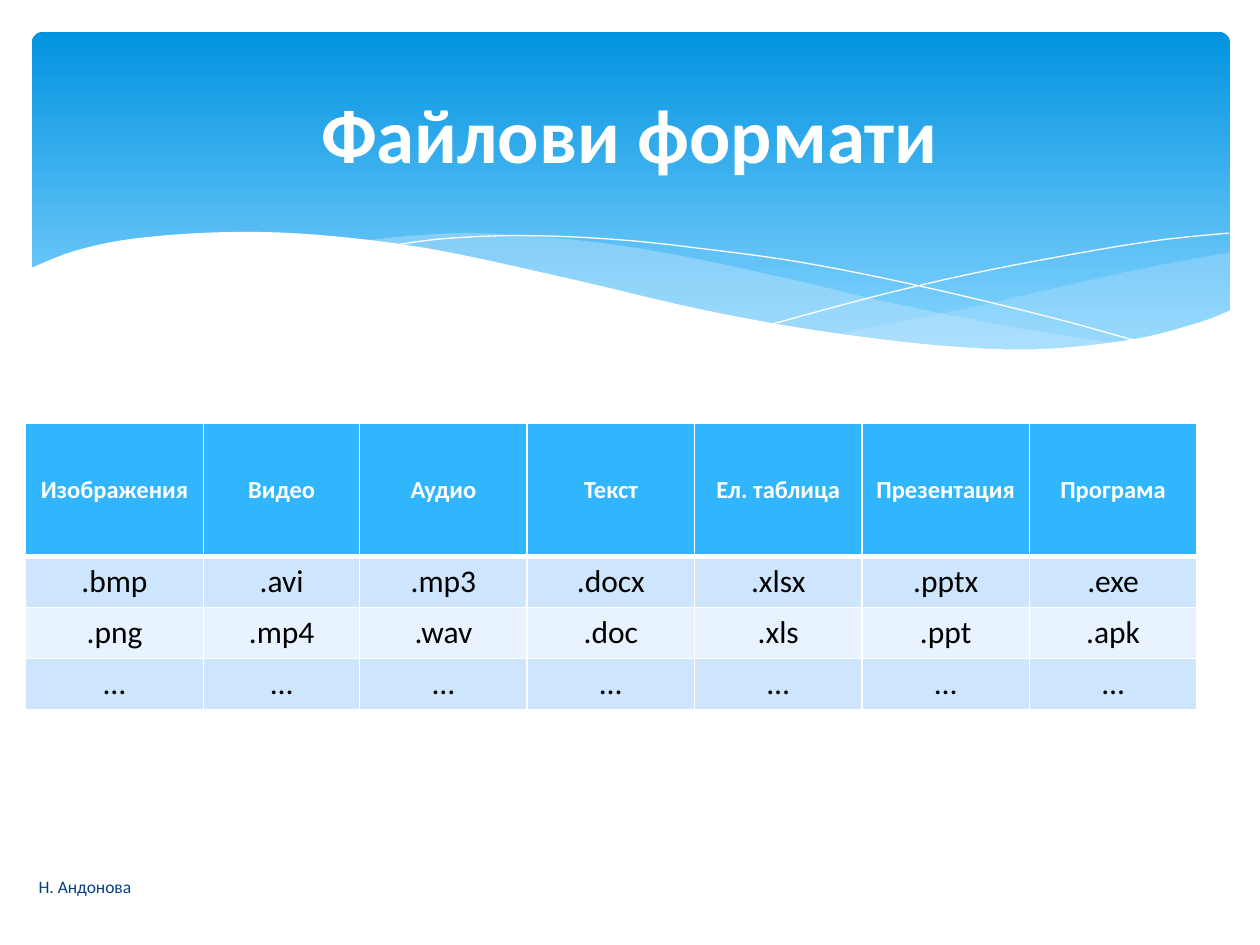
from collections import namedtuple

from lxml import etree
from pptx import Presentation
from pptx import util as u
from pptx.dml.color import RGBColor
from pptx.enum import shapes, text
from pptx.oxml import ns

Box = namedtuple("Box", "left top width height")

WHITE = RGBColor(0xFF, 0xFF, 0xFF)
BLACK = RGBColor(0, 0, 0)
NAVY = RGBColor(0x07, 0x3E, 0x87)
DEEP_SKY = RGBColor(0x02, 0x93, 0xE0)
LIGHT_SKY = RGBColor(0x83, 0xD3, 0xFE)
MIST = RGBColor(0xC6, 0xE7, 0xFC)
HEADER_BLUE = RGBColor(0x31, 0xB6, 0xFD)
BAND_DARK = RGBColor(0xCE, 0xE5, 0xFE)
BAND_LIGHT = RGBColor(0xE8, 0xF3, 0xFF)
FONT = "Calibri"

RIGHT_WAVE_TOP = [(24.16, 4.45), (22.76, 4.7), (21.23, 5.03), (19.15, 5.51), (17.3, 5.89), (16.15, 6.1)]
RIGHT_WAVE_BOTTOM = [(16.15, 6.1), (17.63, 6.27), (19.76, 6.43), (21.51, 6.32), (22.94, 6.05), (24.16, 5.64)]
LONG_WAVE_TOP = [(22.05, 6.3), (19.86, 5.97), (17.3, 5.46), (15.34, 5), (13.11, 4.52),
                 (11.18, 4.22), (9.02, 4.06), (7.7, 4.11), (6.63, 4.22)]
LONG_WAVE_BOTTOM = [(6.63, 4.22), (8.05, 4.42), (9.63, 4.72), (11.84, 5.26), (14.2, 5.77),
                    (16.26, 6.12), (18.36, 6.38), (20.14, 6.43), (22.05, 6.3)]
FALLING_LINE = [(7.21, 4.32), (8.33, 4.17), (9.93, 4.11), (11.79, 4.19), (13.49, 4.37),
                (15.52, 4.65), (17.83, 5.11), (20.47, 5.74), (22.4, 6.27)]
RISING_LINE = [(14.94, 5.89), (17.02, 5.33), (19.08, 4.85), (21.36, 4.42), (22.83, 4.19), (24.13, 4.06)]
PAPER_EDGE = [(-0.05, 4.78), (0.86, 4.42), (2.06, 4.17), (3.86, 4.04), (5.72, 4.09),
              (8, 4.37), (10.72, 4.95), (13.46, 5.59), (15.82, 6.02), (18.26, 6.32),
              (20.27, 6.4), (22.2, 6.2), (23.5, 5.87), (24.18, 5.61)]
PAPER_BOTTOM = [(24.18, 7.72), (-0.05, 7.72)]

FORMATS = [
    ["Изображения", "Видео", "Аудио", "Текст", "Eл. таблица", "Презентация", "Програма"],
    [".bmp", ".avi", ".mp3", ".docx", ".xlsx", ".pptx", ".exe"],
    [".png", ".mp4", ".wav", ".doc", ".xls", ".ppt", ".apk"],
    ["…"] * 7,
]
COLUMN_WEIGHTS = [3.6, 3.15] + [3.38] * 5
ROW_WEIGHTS = [2.69] + [1.03] * 3


def style_text(frame, size, color, bold=False, align=text.PP_ALIGN.CENTER):
    """Format every run of a text frame alike."""
    frame.word_wrap = True
    for para in frame.paragraphs:
        para.alignment = align
        for span in para.runs:
            span.font.name = FONT
            span.font.size = u.Pt(size)
            span.font.bold = bold
            span.font.color.rgb = color


def smooth_curve(knots, steps=6):
    """Return points of a Catmull-Rom curve through the knots."""
    padded = [knots[0], *knots, knots[-1]]
    points = [knots[0]]
    for a, b, c, d in zip(padded, padded[1:], padded[2:], padded[3:]):
        for step in range(1, steps + 1):
            t = step / steps
            points.append(tuple(
                0.5 * (2 * q + (r - p) * t + (2 * p - 5 * q + 4 * r - s) * t ** 2
                       + (3 * q - p - 3 * r + s) * t ** 3)
                for p, q, r, s in zip(a, b, c, d)))
    return points


def add_outline(group, box, points, closed):
    """Draw a freeform through points given in centimetres from the box corner."""
    spots = [(u.Cm(box.left + x), u.Cm(box.top + y)) for x, y in points]
    builder = group.shapes.build_freeform(*spots[0])
    builder.add_line_segments(spots[1:], close=closed)
    outline = builder.convert_to_shape()
    outline.shadow.inherit = False
    return outline


def add_area(group, box, points, color, opacity=100):
    """Fill a closed outline, optionally see-through."""
    area = add_outline(group, box, points, True)
    area.line.fill.background()
    area.fill.solid()
    area.fill.fore_color.rgb = color
    if opacity < 100:
        tint = area.element.spPr.find(".//" + ns.qn("a:srgbClr"))
        etree.SubElement(tint, ns.qn("a:alpha"), val=str(opacity * 1000))


def add_banner(page, box):
    """Draw the gradient banner with its waves."""
    banner = page.shapes.add_shape(shapes.MSO_SHAPE.ROUNDED_RECTANGLE, *map(u.Cm, box))
    banner.adjustments[0] = 0.034
    banner.shadow.inherit = False
    banner.line.fill.background()
    banner.fill.gradient()
    banner.fill.gradient_angle = 270
    for stop, color, position in zip(banner.fill.gradient_stops, (DEEP_SKY, LIGHT_SKY), (0, 0.9)):
        stop.color.rgb = color
        stop.position = position

    waves = page.shapes.add_group_shape()
    for top, bottom, opacity in ((RIGHT_WAVE_TOP, RIGHT_WAVE_BOTTOM, 29),
                                 (LONG_WAVE_TOP, LONG_WAVE_BOTTOM, 40)):
        add_area(waves, box, smooth_curve(top) + smooth_curve(bottom), MIST, opacity)
    for knots in (FALLING_LINE, RISING_LINE):
        curve = add_outline(waves, box, smooth_curve(knots), False)
        curve.fill.background()
        curve.line.color.rgb = WHITE
        curve.line.width = u.Pt(0)
    add_area(waves, box, smooth_curve(PAPER_EDGE) + PAPER_BOTTOM, WHITE)


def place_title(page, box, wording):
    """Move the title placeholder in front of the banner and fill it."""
    title = page.shapes.title
    page.shapes.element.append(title.element)
    title.left, title.top, title.width, title.height = map(u.Cm, box)
    title.text_frame.text = wording
    title.text_frame.vertical_anchor = text.MSO_ANCHOR.MIDDLE
    style_text(title.text_frame, 44, WHITE, bold=True)


def set_borders(cell, bottom_width):
    """Give a cell white borders with its own bottom width."""
    properties = cell._tc.get_or_add_tcPr()
    for side, width in (("L", 1), ("R", 1), ("T", 1), ("B", bottom_width)):
        edge = etree.SubElement(properties, ns.qn("a:ln" + side), w=str(u.Pt(width)))
        paint = etree.SubElement(edge, ns.qn("a:solidFill"))
        etree.SubElement(paint, ns.qn("a:srgbClr"), val=str(WHITE))


def add_format_table(page, box):
    """Add the table of file formats, sharing the box by weight."""
    table = page.shapes.add_table(len(FORMATS), len(FORMATS[0]), *map(u.Cm, box)).table
    for column, weight in zip(table.columns, COLUMN_WEIGHTS):
        column.width = u.Cm(box.width * weight / sum(COLUMN_WEIGHTS))
    for row, weight in zip(table.rows, ROW_WEIGHTS):
        row.height = u.Cm(box.height * weight / sum(ROW_WEIGHTS))
    for r, entries in enumerate(FORMATS):
        header = r == 0
        color = HEADER_BLUE if header else BAND_DARK if r % 2 else BAND_LIGHT
        for c, entry in enumerate(entries):
            cell = table.cell(r, c)
            cell.text_frame.text = entry
            cell.vertical_anchor = text.MSO_ANCHOR.MIDDLE
            style_text(cell.text_frame, 14 if header else 18, WHITE if header else BLACK, bold=header)
            set_borders(cell, 3 if header else 1)
            cell.fill.solid()
            cell.fill.fore_color.rgb = color


def add_author(page, box, name):
    """Write the author's name in the footer."""
    frame = page.shapes.add_textbox(*map(u.Cm, box)).text_frame
    frame.text = name
    frame.vertical_anchor = text.MSO_ANCHOR.MIDDLE
    style_text(frame, 10, NAVY, align=text.PP_ALIGN.LEFT)


def main():
    """Build the deck and save it."""
    deck = Presentation()
    deck.slide_width, deck.slide_height = u.Cm(25.4), u.Cm(19.05)
    page = deck.slides.add_slide(deck.slide_layouts[5])
    add_banner(page, Box(0.64, 0.64, 24.16, 6.86))
    place_title(page, Box(1.27, 0.94, 22.86, 3.48), "Файлови формати")
    add_format_table(page, Box(0.51, 8.53, 23.62, 5.77))
    add_author(page, Box(0.53, 17.37, 10.52, 1.02), "Н. Андонова")
    deck.save("out.pptx")


if __name__ == "__main__":
    main()
